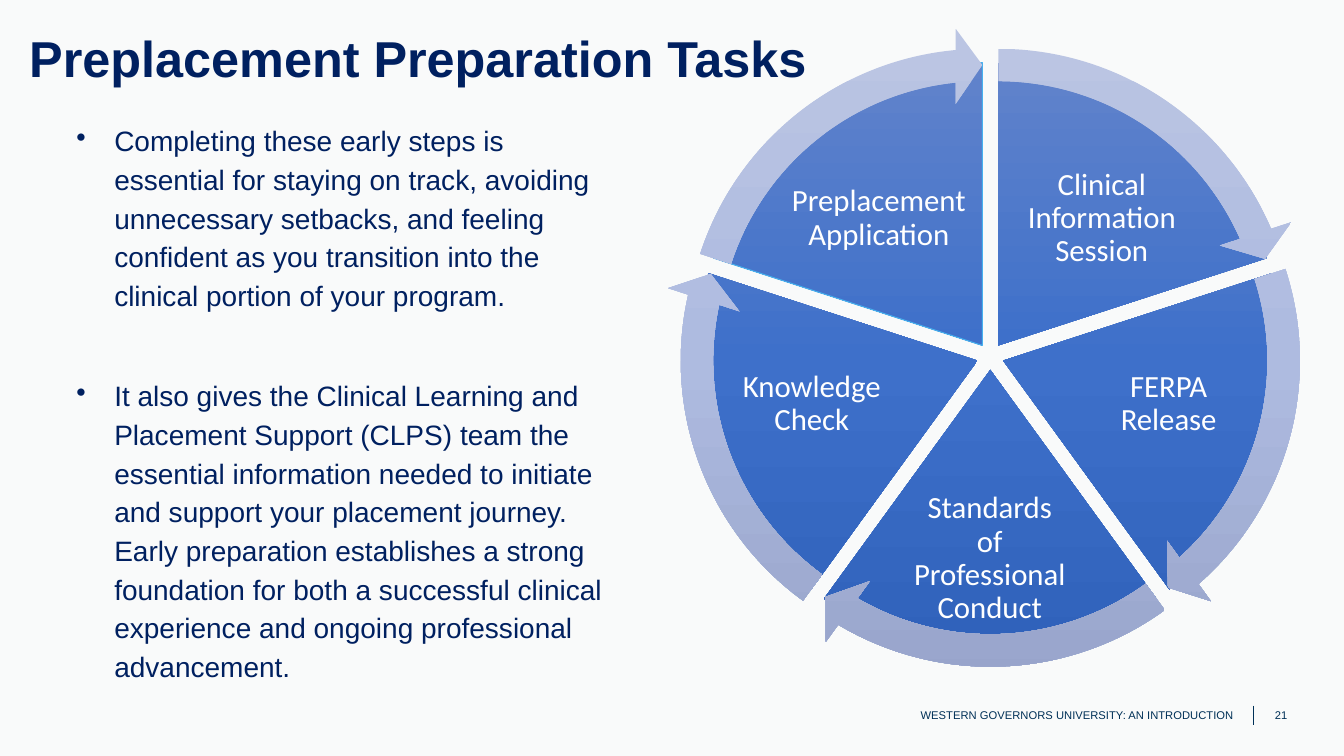
from copy import deepcopy
from math import cos, radians, sin

from pptx import Presentation
from pptx.dml.color import RGBColor
from pptx.enum.shapes import MSO_CONNECTOR, MSO_SHAPE
from pptx.enum.text import MSO_ANCHOR, PP_ALIGN
from pptx.oxml.ns import qn
from pptx.util import Pt

COLORS = {
    "background": "F9FAFA", "heading": "002060", "footer": "003057",
    "label": "FFFFFF", "outline": "46B1EF",
}
SLICE_SHADES = ("6183CB", "3E70CA", "3062BB")
ARROW_SHADES = ("BBC5E3", "AEBBE0", "98A4CB")

# Cycle geometry, in points and degrees
CENTER_X, CENTER_Y = 707.4, 254.6
SLICE_SIZE, ARROW_SIZE = 404, 454.3
OFFSET = 9.65
STEP = 72
ANGLE_UNIT = 0.6  # adjustment value per degree
HEAD_ANGLE = 3.275

STEPS = [
    ("Clinical Information Session", (722.2, 113, 129.6, 86.4)),
    ("FERPA Release", (774.7, 240.5, 120.2, 96.5)),
    ("Standards of Professional Conduct", (649.4, 346.3, 115.2, 105.8)),
    ("Knowledge Check", (519.8, 240.5, 120.2, 96.5)),
    ("Preplacement Application", (563, 113, 129.6, 86.4)),
]
POINTS = [
    "Completing these early steps is essential for staying on track, avoiding "
    "unnecessary setbacks, and feeling confident as you transition into the "
    "clinical portion of your program.",
    "It also gives the Clinical Learning and Placement Support (CLPS) team the "
    "essential information needed to initiate and support your placement "
    "journey. Early preparation establishes a strong foundation for both a "
    "successful clinical experience and ongoing professional advancement.",
]


def rgb(name):
    return RGBColor.from_string(COLORS.get(name, name))


def write(paragraph, text, size=20, color="heading", font="Arial", bold=False,
          align=PP_ALIGN.LEFT, spacing=1.0, before=0, after=0, bullet=False):
    if bullet:
        properties = paragraph._p.get_or_add_pPr()
        properties.set("marL", str(Pt(27)))
        properties.set("indent", str(Pt(-27)))
        mark = properties.makeelement(qn("a:buChar"), {"char": "•"})
        properties.append(mark)
    paragraph.alignment = align
    paragraph.line_spacing = spacing
    paragraph.space_before, paragraph.space_after = Pt(before), Pt(after)
    run = paragraph.add_run()
    run.text = text
    run.font.name, run.font.size, run.font.bold = font, Pt(size), bold
    run.font.color.rgb = rgb(color)


class SlideBuilder:
    def __init__(self, deck):
        self.slide = deck.slides.add_slide(deck.slide_layouts[5])
        fill = self.slide.background.fill
        fill.solid()
        fill.fore_color.rgb = rgb("background")

    def title(self, text, box):
        heading = self.slide.shapes.title
        heading.left, heading.top, heading.width, heading.height = map(Pt, box)
        heading.text_frame.vertical_anchor = MSO_ANCHOR.MIDDLE
        write(heading.text_frame.paragraphs[0], text, size=36, bold=True, spacing=0.9)

    def text(self, texts, box, anchor=MSO_ANCHOR.MIDDLE, inset=None, gap=0, **style):
        frame = self.slide.shapes.add_textbox(*map(Pt, box)).text_frame
        frame.word_wrap = True
        frame.vertical_anchor = anchor
        if inset is not None:
            frame.margin_left = frame.margin_right = Pt(inset)
            frame.margin_top = frame.margin_bottom = Pt(inset)
        for index, text in enumerate(texts):
            paragraph = frame.add_paragraph() if index else frame.paragraphs[0]
            write(paragraph, text, before=gap if index else 0, **style)

    def cycle_part(self, kind, index, size, adjustments, shades, outline=None):
        # Each part is pushed outward along the middle of its sector
        middle = radians(270 + STEP * (index + 0.5))
        left = CENTER_X + OFFSET * cos(middle) - size / 2
        top = CENTER_Y + OFFSET * sin(middle) - size / 2
        part = self.slide.shapes.add_shape(kind, Pt(left), Pt(top), Pt(size), Pt(size))
        part.shadow.inherit = False
        for position, value in enumerate(adjustments):
            part.adjustments[position] = value
        part.fill.gradient()
        part.fill.gradient_angle = 270
        stops = part._element.spPr.find(qn("a:gradFill")).find(qn("a:gsLst"))
        stops.append(deepcopy(stops[0]))
        for stop, place, shade in zip(part.fill.gradient_stops, (0, 0.5, 1), shades):
            stop.position = place
            stop.color.rgb = rgb(shade)
        if outline:
            part.line.color.rgb = rgb(outline)
            part.line.width = Pt(0.75)
        else:
            part.line.fill.background()

    def line(self, start, end, color, width):
        rule = self.slide.shapes.add_connector(
            MSO_CONNECTOR.STRAIGHT, *map(Pt, start + end))
        rule.line.color.rgb = rgb(color)
        rule.line.width = Pt(width)
        properties = rule._element.spPr
        properties.append(properties.makeelement(qn("a:effectLst"), {}))


def main():
    deck = Presentation()
    deck.slide_width, deck.slide_height = Pt(960), Pt(540)
    page = SlideBuilder(deck)

    # Title and bullet points
    page.title("Preplacement Preparation Tasks", (13.7, 12.2, 581, 62.6))
    page.text(POINTS, (47.5, 81.4, 402.5, 411), anchor=MSO_ANCHOR.TOP,
              gap=36, spacing=1.15, after=8, bullet=True)

    # Cycle slices with their labels
    starts = [(270 + STEP * index) % 360 * ANGLE_UNIT for index in range(len(STEPS))]
    ends = starts[1:] + starts[:1]
    for index, (label, box) in enumerate(STEPS):
        outline = "outline" if label == "Preplacement Application" else None
        page.cycle_part(MSO_SHAPE.PIE, index, SLICE_SIZE,
                        (starts[index], ends[index]), SLICE_SHADES, outline)
        page.text([label], box, inset=2.2, size=22, color="label",
                  font="Calibri", align=PP_ALIGN.CENTER, spacing=0.9)

    # Arrows around the cycle
    for index, (start, end) in enumerate(zip(starts, ends)):
        page.cycle_part(MSO_SHAPE.CIRCULAR_ARROW, index, ARROW_SIZE,
                        (0.051, HEAD_ANGLE, end - HEAD_ANGLE, start, 0.059),
                        ARROW_SHADES)

    # Footer
    page.text(["WESTERN GOVERNORS UNIVERSITY: AN INTRODUCTION"],
              (367.2, 496, 521.3, 28.8), size=8, color="footer",
              align=PP_ALIGN.RIGHT, after=6)
    page.line((895, 504), (895, 517.7), "footer", 0.5)
    page.text(["21"], (903.6, 496, 31.7, 28.8), size=8, color="footer", after=6)

    deck.save("out.pptx")


if __name__ == "__main__":
    main()
